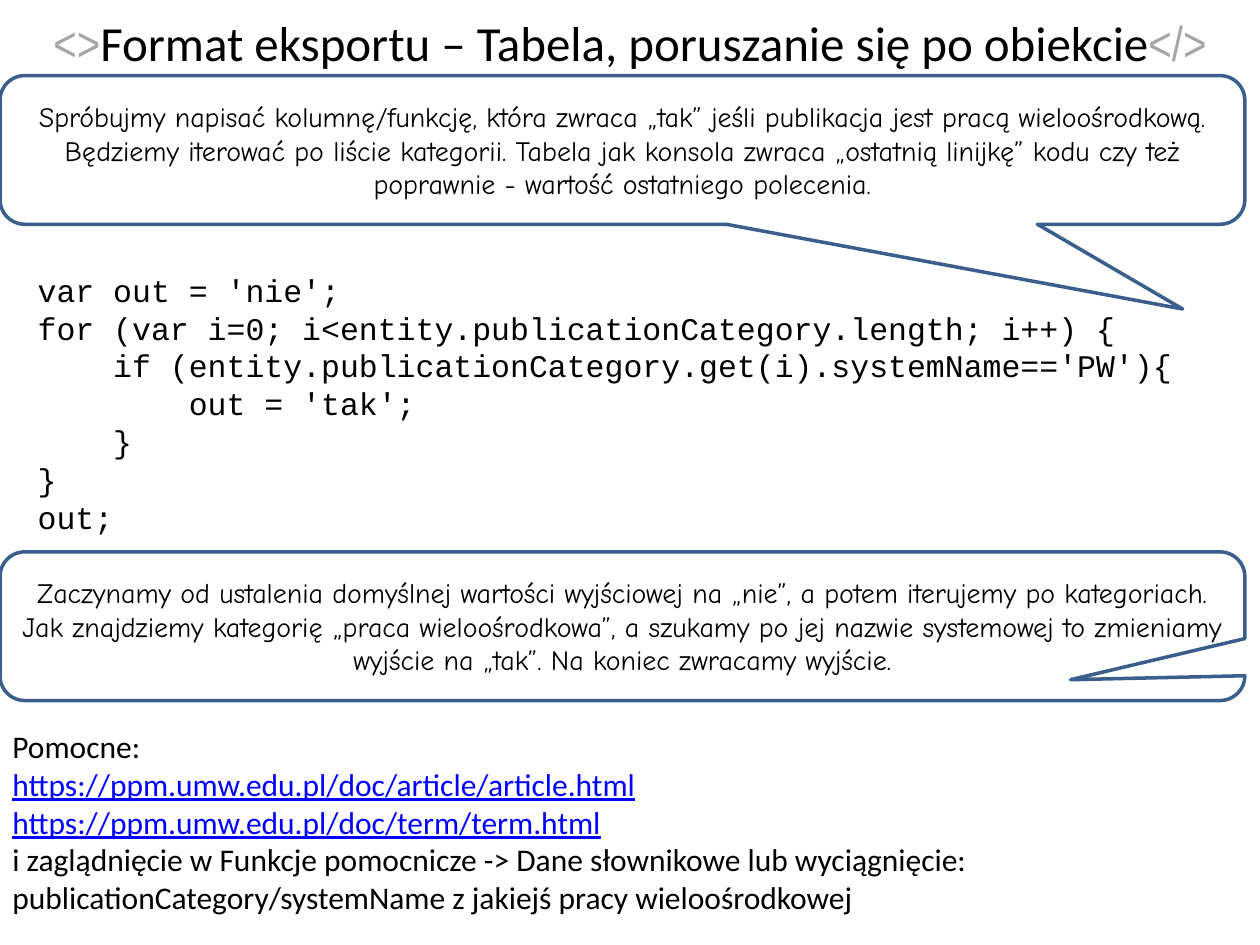
from pptx import Presentation
from pptx.dml.color import RGBColor
from pptx.enum.shapes import MSO_SHAPE as Shape
from pptx.enum.text import MSO_ANCHOR as Anchor, MSO_AUTO_SIZE as AutoSize, PP_ALIGN as Align
from pptx.util import Emu, Pt

PX = 9144  # EMU in one px, 100 px to the inch
BLACK, WHITE, GREY = "000000", "FFFFFF", "A6A6A6"
OUTLINE, LINK = "3A5F8C", "0000FF"

CODE = """var out = 'nie';
for (var i=0; i<entity.publicationCategory.length; i++) {
    if (entity.publicationCategory.get(i).systemName=='PW'){
        out = 'tak';
    }
}
out;"""


def px(*lengths):
    return [Emu(length * PX) for length in lengths]


def color(hex_code):
    return RGBColor.from_string(hex_code)


def add_run(paragraph, text, *, font="Calibri", size=18, ink=BLACK, underline=False):
    run = paragraph.add_run()
    run.text = text
    run.font.name = font
    run.font.size = Pt(size)
    run.font.color.rgb = color(ink)
    run.font.underline = underline


def write(frame, lines, *, align=Align.LEFT, anchor=Anchor.TOP, **look):
    """Fill a frame; each line is a list of (text, format overrides) pairs."""
    frame.word_wrap = True
    frame.vertical_anchor = anchor
    for index, line in enumerate(lines):
        paragraph = frame.add_paragraph() if index else frame.paragraphs[0]
        paragraph.alignment = align
        for text, overrides in line:
            add_run(paragraph, text, **{**look, **overrides})


def add_title(slide, box, title):
    frame = slide.shapes.add_textbox(*px(*box)).text_frame
    bracket = {"font": "Arial Narrow", "ink": GREY}
    write(frame, [[("<>", bracket), (title, {}), ("</>", bracket)]],
          align=Align.CENTER, anchor=Anchor.MIDDLE, size=28)


def add_callout(slide, box, tip, message):
    """Speech bubble; tip is its pointer's offset from the centre, as shares of its size."""
    bubble = slide.shapes.add_shape(Shape.ROUNDED_RECTANGULAR_CALLOUT, *px(*box))
    bubble.adjustments[0], bubble.adjustments[1] = tip
    bubble.shadow.inherit = False
    bubble.fill.solid()
    bubble.fill.fore_color.rgb = color(WHITE)
    bubble.line.color.rgb = color(OUTLINE)
    bubble.line.width = Pt(2)
    write(bubble.text_frame, [[(message, {})]], align=Align.CENTER,
          anchor=Anchor.MIDDLE, font="Comic Neue", size=16)


def add_text_block(slide, box, lines, **look):
    frame = slide.shapes.add_textbox(*px(*box)).text_frame
    write(frame, lines, **look)
    frame.auto_size = AutoSize.SHAPE_TO_FIT_TEXT


def main():
    deck = Presentation()
    deck.slide_width, deck.slide_height = px(1000, 750)
    slide = deck.slides.add_slide(deck.slide_layouts[6])

    add_title(slide, (0, -6, 1000, 79), "Format eksportu – Tabela, poruszanie się po obiekcie")
    add_callout(
        slide, (0, 60, 988, 118), (0.45, 1.07),
        "Spróbujmy napisać kolumnę/funkcję, która zwraca „tak” jeśli publikacja jest pracą "
        "wieloośrodkową. Będziemy iterować po liście kategorii. Tabela jak konsola zwraca "
        "„ostatnią linijkę” kodu czy też poprawnie - wartość ostatniego polecenia.")
    add_text_block(slide, (20, 210, 929, 222),
                   [[(line, {})] for line in CODE.splitlines()], font="Courier New")
    add_callout(
        slide, (0, 438, 988, 118), (0.36, 0.36),
        "Zaczynamy od ustalenia domyślnej wartości wyjściowej na „nie”, a potem iterujemy po "
        "kategoriach. Jak znajdziemy kategorię „praca wieloośrodkowa”, a szukamy po jej nazwie "
        "systemowej to zmieniamy wyjście na „tak”. Na koniec zwracamy wyjście.")
    address = {"ink": LINK, "underline": True}
    add_text_block(slide, (0, 572, 1000, 192), [
        [("Pomocne:", {})],
        [("https://ppm.umw.edu.pl/doc/article/article.html", address)],
        [("https://ppm.umw.edu.pl/doc/term/term.html", address)],
        [("i zaglądnięcie w Funkcje pomocnicze -> Dane słownikowe lub wyciągnięcie:", {})],
        [("publicationCategory/systemName z jakiejś pracy wieloośrodkowej", {})],
    ])
    deck.save("out.pptx")


if __name__ == "__main__":
    main()
